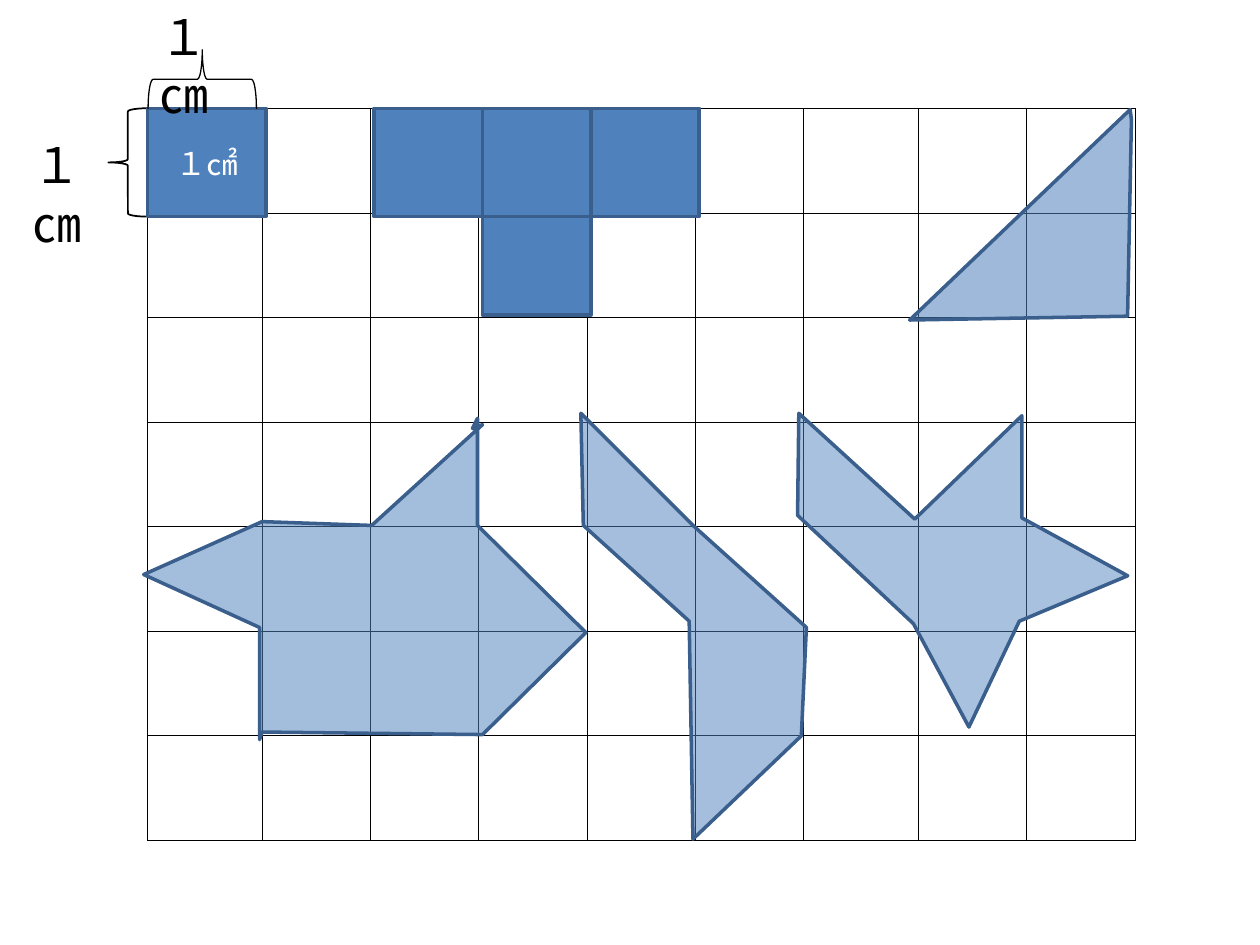
from lxml import etree
from pptx import Presentation
from pptx import util as u
from pptx.dml.color import RGBColor
from pptx.enum import shapes, text
from pptx.oxml.ns import qn

BLUE = RGBColor(0x4F, 0x81, 0xBD)
NAVY = RGBColor(0x3A, 0x5F, 0x8C)
BLACK = RGBColor(0, 0, 0)
WHITE = RGBColor(0xFF, 0xFF, 0xFF)

UNIT = 0.86
GRID_LEFT, GRID_TOP = 1.17, 0.86
COLUMN_WIDTHS = [0.91] + [UNIT] * 5 + [0.91] + [UNIT] * 2
ROW_COUNT, ROW_HEIGHT = 7, 0.83

# Left, top, opacity in percent, corners relative to left and top
FIGURES = [
    (7.22, 0.87, 55, [(1.75, 0), (0, 1.67), (1.73, 1.64), (1.76, 0.08)]),
    (1.14, 3.32, 52, [(2.69, 0.05), (1.81, 0.85), (0.94, 0.82), (0, 1.24),
                      (0.92, 1.66), (0.92, 2.55), (0.94, 2.49), (2.69, 2.51),
                      (3.51, 1.7), (2.65, 0.85), (2.65, 0), (2.61, 0.08),
                      (2.62, 0.08)]),
    (6.33, 3.28, 49, [(0.01, 0), (0.93, 0.84), (1.78, 0.02), (1.78, 0.83),
                      (2.62, 1.29), (1.76, 1.65), (1.36, 2.49), (0.92, 1.67),
                      (0, 0.81)]),
    (4.61, 3.28, 51, [(0, 0), (0.02, 0.89), (0.86, 1.65), (0.89, 3.38),
                      (1.75, 2.56), (1.79, 1.7), (0.89, 0.89)]),
]


def inches(*lengths):
    return [u.Inches(length) for length in lengths]


def write(shape, words, size, color, align=text.PP_ALIGN.LEFT):
    para = shape.text_frame.paragraphs[0]
    para.alignment = align
    span = para.add_run()
    span.text = words
    span.font.name = "Calibri"
    span.font.size = u.Pt(size)
    span.font.color.rgb = color


def style(shape, line, width, fill=None):
    shape.shadow.inherit = False
    shape.line.color.rgb = line
    shape.line.width = u.Pt(width)
    if fill is None:
        shape.fill.background()
    else:
        shape.fill.solid()
        shape.fill.fore_color.rgb = fill


def set_borders(cell):
    props = cell._tc.get_or_add_tcPr()
    for position, side in enumerate(("lnL", "lnR", "lnT", "lnB")):
        line = etree.Element(qn(f"a:{side}"), w=str(u.Pt(0.5)))
        fill = etree.SubElement(line, qn("a:solidFill"))
        etree.SubElement(fill, qn("a:srgbClr"), val=str(BLACK))
        props.insert(position, line)


def add_grid(page, left, top):
    frame = page.shapes.add_table(
        ROW_COUNT, len(COLUMN_WIDTHS),
        *inches(left, top, sum(COLUMN_WIDTHS), ROW_COUNT * ROW_HEIGHT))
    table = frame.table
    table.first_row = table.horz_banding = False
    for column, width in zip(table.columns, COLUMN_WIDTHS):
        column.width = u.Inches(width)
    for row in table.rows:
        row.height = u.Inches(ROW_HEIGHT)
    for cell in table.iter_cells():
        cell.fill.background()
        set_borders(cell)


def add_square(parent, left, top, width=UNIT, height=UNIT):
    square = parent.shapes.add_shape(
        shapes.MSO_SHAPE.RECTANGLE, *inches(left, top, width, height))
    style(square, NAVY, 2, BLUE)
    return square


def add_brace(page, left, top, width, height, weight, rotation=0):
    brace = page.shapes.add_shape(
        shapes.MSO_SHAPE.LEFT_BRACE, *inches(left, top, width, height))
    style(brace, BLACK, weight)
    brace.rotation = rotation


def add_length_label(page, left, top):
    box = page.shapes.add_textbox(*inches(left, top, UNIT, 0.57))
    box.text_frame.word_wrap = False
    box.text_frame.auto_size = text.MSO_AUTO_SIZE.SHAPE_TO_FIT_TEXT
    write(box, "１㎝", 28, BLACK)


def add_unit_square(page, left, top):
    """Place the one-centimetre square with its braces and labels."""
    add_brace(page, left - 0.31, top, 0.31, UNIT, 1)
    add_length_label(page, left - 1.01, top + 0.16)
    square = add_square(page, left, top, width=0.94)
    square.text_frame.vertical_anchor = text.MSO_ANCHOR.MIDDLE
    write(square, "１㎠", 18, WHITE, text.PP_ALIGN.CENTER)
    add_brace(page, left + 0.2, top - 0.66, 0.47, UNIT, 0.75, rotation=90)
    add_length_label(page, left, top - 0.86)


def add_t_figure(page, left, top):
    group = page.shapes.add_group_shape()
    for column in range(3):
        add_square(group, left + column * UNIT, top)
    add_square(group, left + UNIT, top + UNIT, height=0.78)


def add_figure(page, left, top, opacity, corners):
    points = [inches(left + x, top + y) for x, y in corners]
    builder = page.shapes.build_freeform(*points[0])
    builder.add_line_segments(points[1:], close=True)
    figure = builder.convert_to_shape()
    style(figure, NAVY, 2, BLUE)
    color = figure._element.spPr.find(qn("a:solidFill")).find(qn("a:srgbClr"))
    etree.SubElement(color, qn("a:alpha"), val=str(opacity * 1000))


def main():
    deck = Presentation()
    deck.slide_width, deck.slide_height = inches(10, 7.5)
    page = deck.slides.add_slide(deck.slide_layouts[6])
    add_grid(page, GRID_LEFT, GRID_TOP)
    add_unit_square(page, GRID_LEFT, GRID_TOP)
    add_t_figure(page, 2.97, GRID_TOP)
    for figure in FIGURES:
        add_figure(page, *figure)
    deck.save("out.pptx")


if __name__ == "__main__":
    main()
